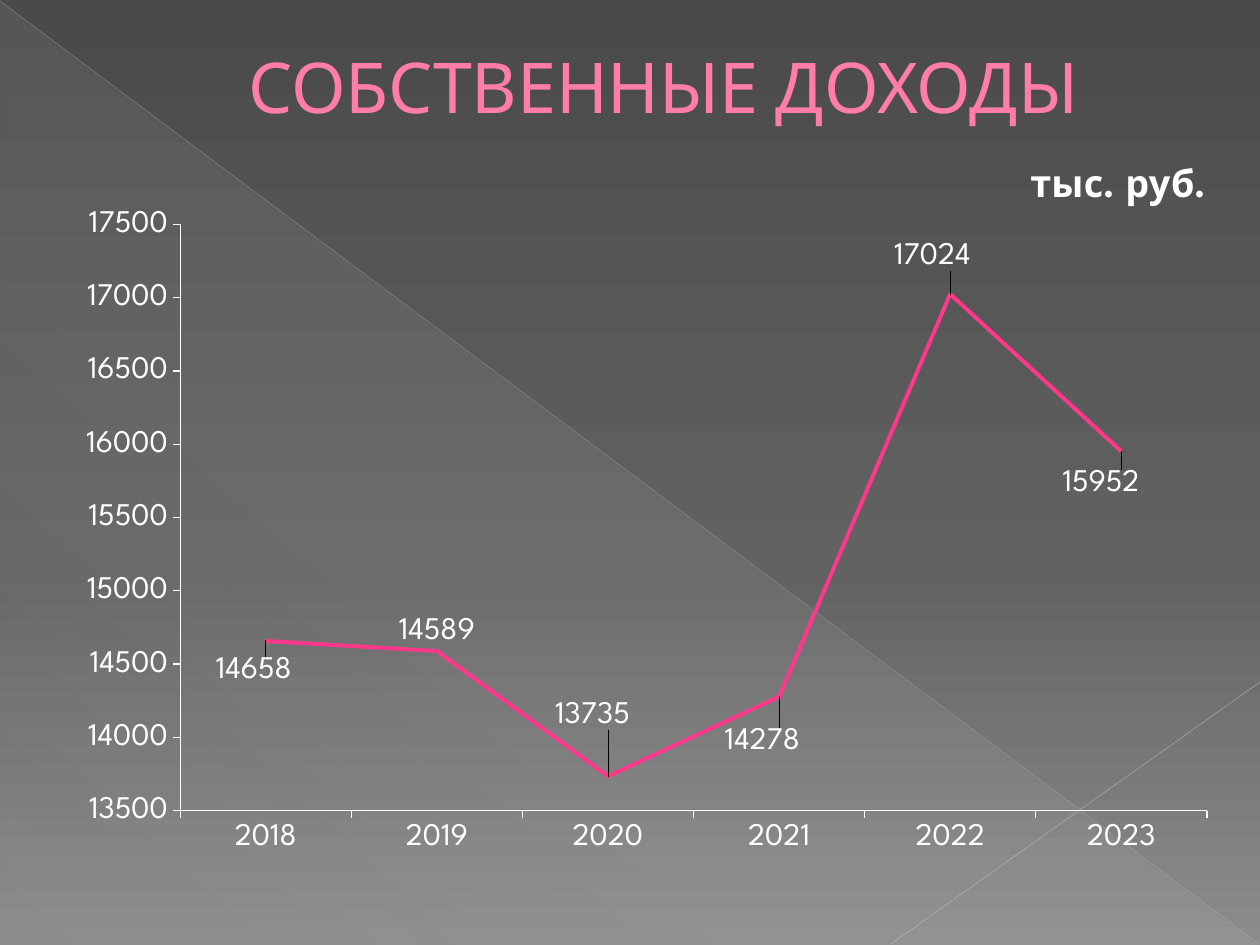
from typing import NamedTuple

from lxml import etree
from pptx import Presentation
from pptx import util as u
from pptx.chart.data import CategoryChartData
from pptx.dml.color import RGBColor
from pptx.enum import chart as ch, shapes, text
from pptx.oxml import parse_xml
from pptx.oxml.ns import nsdecls, qn

PX = 914400 / 126
FONT = "League Spartan"
COLORS = {
    "title": "FF7DA7", "title_edge": "B12761", "series": "FF388C", "text": "FFFFFF",
    "top": "4A4A4A", "middle": "626262", "bottom": "8C8C8C",
    "triangle": "D2D2D2", "diagonal": "BFBFBF", "corner": "C6C6C6",
}


class Stop(NamedTuple):
    position: int
    color: str
    alpha: int = 100


class Stroke(NamedTuple):
    start: tuple[int, int]
    end: tuple[int, int]
    color: str
    width: float
    alpha: int


class Income(NamedTuple):
    year: str
    value: int
    label_shift: tuple[int, int]  # px from the place above the point


BACKGROUND = [Stop(0, "top"), Stop(60, "middle"), Stop(100, "bottom")]
TRIANGLE = [Stop(0, "triangle", 10), Stop(70, "triangle", 8), Stop(100, "triangle", 1)]
STROKES = [
    Stroke((0, 1), (1259, 944), "diagonal", 0.39, 35),
    Stroke((1260, 682), (891, 944), "corner", 0.47, 45),
]
INCOMES = [
    Income("2018", 14658, (-12, 49)),
    Income("2019", 14589, (0, 0)),
    Income("2020", 13735, (-15, -41)),
    Income("2021", 14278, (-17, 65)),
    Income("2022", 17024, (-18, -18)),
    Income("2023", 15952, (-20, 52)),
]
CHART_WIDTH, CHART_HEIGHT = 1191, 735


def px(value: float) -> int:
    return round(value * PX)


def rgb(name: str) -> RGBColor:
    return RGBColor.from_string(COLORS[name])


def set_gradient(properties, stops: list[Stop], angle: int) -> None:
    """Put a gradient in place of the solid fill."""
    stop_xml = "".join(
        f'<a:gs pos="{stop.position * 1000}"><a:srgbClr val="{COLORS[stop.color]}">'
        f'<a:alpha val="{stop.alpha * 1000}"/></a:srgbClr></a:gs>'
        for stop in stops
    )
    gradient = parse_xml(
        f'<a:gradFill {nsdecls("a")} rotWithShape="1"><a:gsLst>{stop_xml}</a:gsLst>'
        f'<a:lin ang="{angle * 60000}" scaled="0"/></a:gradFill>'
    )
    properties.replace(properties.find(qn("a:solidFill")), gradient)


def draw_stroke(slide, stroke: Stroke) -> None:
    line = slide.shapes.add_connector(
        shapes.MSO_CONNECTOR.STRAIGHT, *map(px, stroke.start + stroke.end))
    line.line.color.rgb = rgb(stroke.color)
    line.line.width = u.Pt(stroke.width)
    properties = line._element.spPr
    color = properties.find(".//" + qn("a:srgbClr"))
    etree.SubElement(color, qn("a:alpha")).set("val", str(stroke.alpha * 1000))
    etree.SubElement(properties, qn("a:effectLst"))


def set_layout(parent, index: int, **settings) -> None:
    """Give a chart part a manual layout, as its child at the index."""
    for old in parent.findall(qn("c:layout")):
        parent.remove(old)
    layout = etree.Element(qn("c:layout"))
    manual = etree.SubElement(layout, qn("c:manualLayout"))
    for name, value in settings.items():
        etree.SubElement(manual, qn(f"c:{name}")).set("val", str(value))
    parent.insert(index, layout)


def set_font(font, size: float, color: str, bold: bool = False) -> None:
    font.name, font.size, font.bold = FONT, u.Pt(size), bold
    font.color.rgb = rgb(color)


def draw_background(slide) -> None:
    slide.background.fill.solid()
    set_gradient(slide._element.cSld.find(".//" + qn("p:bgPr")), BACKGROUND, 90)
    triangle = slide.shapes.add_shape(
        shapes.MSO_SHAPE.RIGHT_TRIANGLE, px(1), px(2), px(1258), px(943))
    triangle.shadow.inherit = False
    triangle.fill.solid()
    triangle.line.fill.background()
    set_gradient(triangle._element.spPr, TRIANGLE, 133)
    for stroke in STROKES:
        draw_stroke(slide, stroke)


def draw_title(slide) -> None:
    title = slide.shapes.title
    title.left, title.top, title.width, title.height = map(px, (63, 37, 1134, 98))
    title.text_frame.vertical_anchor = text.MSO_ANCHOR.MIDDLE
    paragraph = title.text_frame.paragraphs[0]
    paragraph.alignment = text.PP_ALIGN.CENTER
    paragraph._p.get_or_add_pPr().set("marL", str(px(67)))
    run = paragraph.add_run()
    run.text = "СОБСТВЕННЫЕ ДОХОДЫ"
    set_font(run.font, 40, "title")
    run._r.get_or_add_rPr().insert(0, parse_xml(
        f'<a:ln {nsdecls("a")} w="{u.Pt(0.5)}"><a:solidFill>'
        f'<a:srgbClr val="{COLORS["title_edge"]}"/></a:solidFill></a:ln>'))


def draw_chart(slide) -> None:
    data = CategoryChartData()
    data.categories = [income.year for income in INCOMES]
    data.add_series("Series 1", [income.value for income in INCOMES])
    chart = slide.shapes.add_chart(
        ch.XL_CHART_TYPE.LINE, px(35), px(145), px(CHART_WIDTH), px(CHART_HEIGHT), data).chart
    set_font(chart.font, 18, "text")
    chart.has_legend = False
    set_layout(chart.element.find(".//" + qn("c:plotArea")), 0, layoutTarget="inner",
               xMode="edge", yMode="edge", x=0.122, y=0.108, w=0.862, h=0.798)

    # Unit in the upper right corner
    chart.has_title = True
    paragraph = chart.chart_title.text_frame.paragraphs[0]
    paragraph.text = "тыс. руб."
    set_font(paragraph.font, 21.6, "text", bold=True)
    set_layout(chart.element.find(".//" + qn("c:title")), 1,
               xMode="edge", yMode="edge", x=0.83, y=0.02)

    # Axes
    for axis in (chart.category_axis, chart.value_axis):
        axis.has_major_gridlines = False
        axis.major_tick_mark = ch.XL_TICK_MARK.OUTSIDE
        axis.format.line.color.rgb = rgb("text")
        axis.format.line.width = u.Pt(0.75)
        set_font(axis.tick_labels.font, 18, "text")
    chart.value_axis.minimum_scale = 13500
    chart.value_axis.maximum_scale = 17500
    chart.value_axis.major_unit = 500

    # Line and its labels
    plot = chart.plots[0]
    plot.vary_by_categories = False
    series = plot.series[0]
    series.smooth = False
    series.marker.style = ch.XL_MARKER_STYLE.NONE
    series.format.line.color.rgb = rgb("series")
    series.format.line.width = u.Pt(2.25)
    labels = series.data_labels
    labels.show_value = True
    labels.position = ch.XL_LABEL_POSITION.ABOVE
    set_font(labels.font, 18, "text")
    for index, income in enumerate(INCOMES):
        label = series.points[index].data_label
        label.position = ch.XL_LABEL_POSITION.ABOVE
        set_font(label.font, 18, "text")
    for element, income in zip(chart.element.iter(qn("c:dLbl")), INCOMES):
        shift_x, shift_y = income.label_shift
        set_layout(element, 1, x=round(shift_x / CHART_WIDTH, 3),
                   y=round(shift_y / CHART_HEIGHT, 3))


def main() -> None:
    presentation = Presentation()
    presentation.slide_width, presentation.slide_height = px(1260), px(945)
    slide = presentation.slides.add_slide(presentation.slide_layouts[5])
    draw_background(slide)
    draw_title(slide)
    draw_chart(slide)
    presentation.save("out.pptx")


if __name__ == "__main__":
    main()
